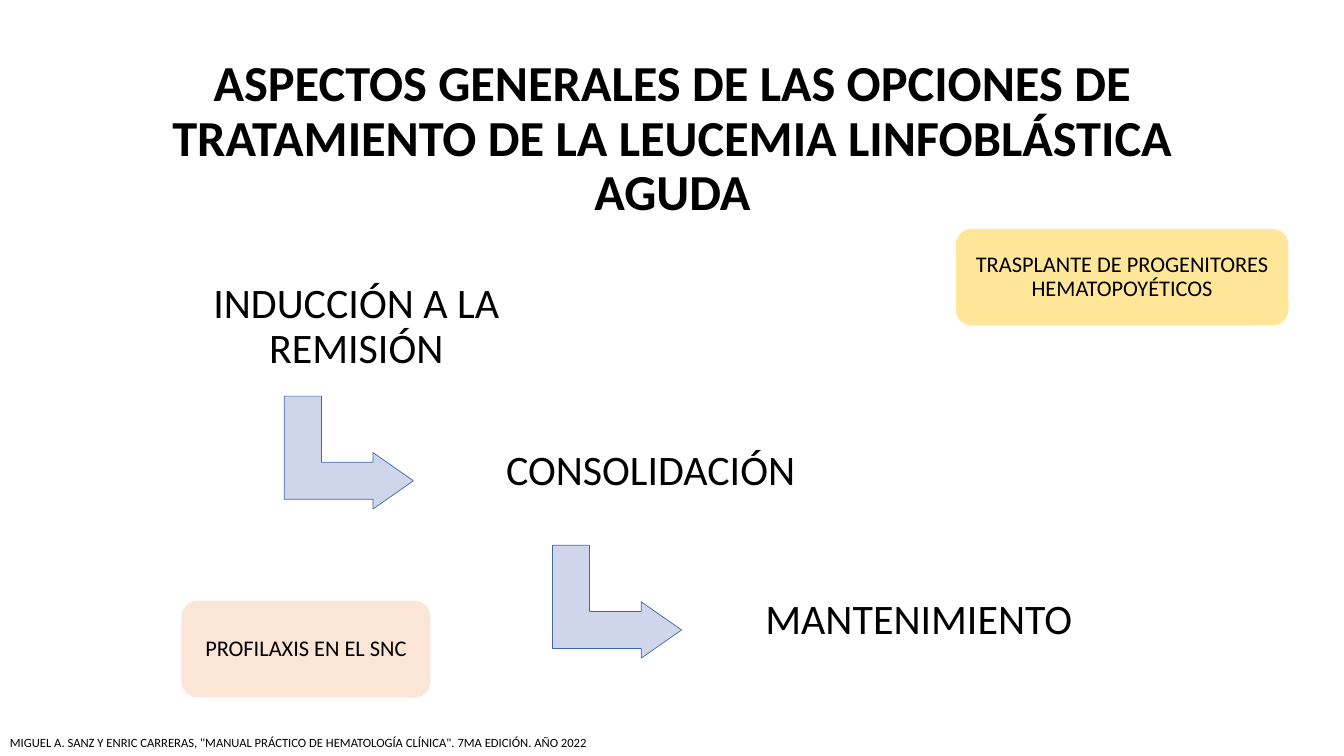
from pptx import Presentation
from pptx.dml.color import RGBColor
from pptx.enum.shapes import MSO_SHAPE
from pptx.enum.text import MSO_ANCHOR, MSO_AUTO_SIZE, PP_ALIGN
from pptx.util import Inches, Pt

ROUNDED = MSO_SHAPE.ROUNDED_RECTANGLE
BENT_ARROW = MSO_SHAPE.BENT_UP_ARROW
CENTER, LEFT = PP_ALIGN.CENTER, PP_ALIGN.LEFT
MIDDLE = MSO_ANCHOR.MIDDLE
GROW = MSO_AUTO_SIZE.SHAPE_TO_FIT_TEXT

FONT = "Calibri"
STEP_SIZE = (4.53, 1.32)
STEPS = [
    ("INDUCCIÓN A LA REMISIÓN", 1.27, 2.59),
    ("CONSOLIDACIÓN", 4.19, 4.02),
    ("MANTENIMIENTO", 6.85, 5.5),
]
NOTES = [
    ("PROFILAXIS EN EL SNC", (1.8, 5.96, 2.47, 0.96), "FBE5D6"),
    ("TRASPLANTE DE PROGENITORES HEMATOPOYÉTICOS", (9.48, 2.27, 3.3, 0.96), "FFE699"),
]


def color(value):
    """Turn a hex string into a colour."""
    return RGBColor.from_string(value)


def write(tf, text, size, align=CENTER, spacing=0.9, bold=False):
    """Write one wrapped paragraph into a text frame."""
    tf.word_wrap = True
    p = tf.paragraphs[0]
    p.alignment = align
    p.line_spacing = spacing
    r = p.add_run()
    r.text = text
    r.font.name = FONT
    r.font.size = Pt(size)
    r.font.bold = bold
    r.font.color.rgb = color("000000")


def add_text(s, box, text, size, **style):
    """Add a text box that grows with its text."""
    tf = s.shapes.add_textbox(*map(Inches, box)).text_frame
    write(tf, text, size, **style)
    tf.auto_size = GROW


def add_filled(s, kind, box, fill):
    """Add a flat preset shape without an outline."""
    sp = s.shapes.add_shape(kind, *map(Inches, box))
    sp.shadow.inherit = False
    sp.fill.solid()
    sp.fill.fore_color.rgb = color(fill)
    sp.line.fill.background()
    return sp


def add_label(s, box, text, size, fill, inset):
    """Add a rounded box with centred text."""
    sp = add_filled(s, ROUNDED, box, fill)
    sp.adjustments[0] = 0.167
    tf = sp.text_frame
    tf.vertical_anchor = MIDDLE
    tf.margin_left = tf.margin_right = Inches(inset)
    tf.margin_top = tf.margin_bottom = Inches(inset)
    write(tf, text, size)


def add_arrow(s, left, top):
    """Add a bent arrow leading to the step at the given corner."""
    sp = add_filled(s, BENT_ARROW, (left - 1.29, top - 0.17, 1.12, 1.28), "CFD5EA")
    sp.rotation = 90
    for i, value in enumerate((0.328, 0.25, 0.358)):
        sp.adjustments[i] = value
    sp.line.color.rgb = color("3E67B2")
    sp.line.width = Pt(0.5)


def add_steps(s):
    """Add the descending treatment steps and the arrows between them."""
    for i, (text, left, top) in enumerate(STEPS):
        if i:
            add_arrow(s, left, top)
        add_label(s, (left, top, *STEP_SIZE), text, 30, "FFFFFF", 0.12)


def main():
    """Build and save the slide."""
    prs = Presentation()
    prs.slide_width, prs.slide_height = Inches(13.33), Inches(7.5)
    s = prs.slides.add_slide(prs.slide_layouts[6])
    add_text(s, (1.6, 0.53, 10.14, 1.74),
             "ASPECTOS GENERALES DE LAS OPCIONES DE TRATAMIENTO "
             "DE LA LEUCEMIA LINFOBLÁSTICA AGUDA", 36, bold=True)
    add_steps(s)
    add_text(s, (0, 7.24, 6.67, 0.25),
             'MIGUEL A. SANZ Y ENRIC CARRERAS, "MANUAL PRÁCTICO DE '
             'HEMATOLOGÍA CLÍNICA". 7MA EDICIÓN. AÑO 2022',
             9, align=LEFT, spacing=1.0)
    for text, box, fill in NOTES:
        add_label(s, box, text, 16, fill, 0.07)
    prs.save("out.pptx")


if __name__ == "__main__":
    main()
